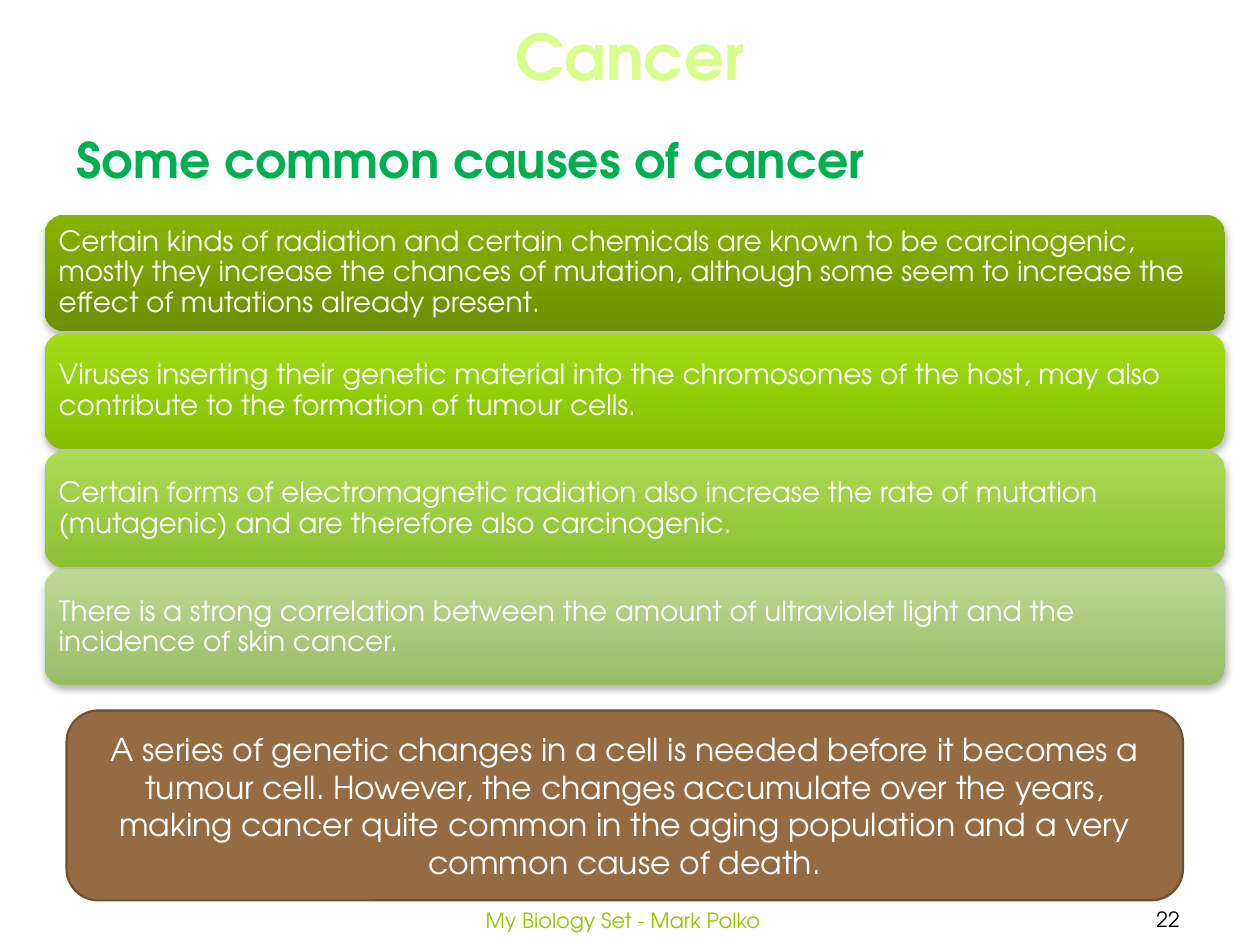
"""Build a slide on the common causes of cancer."""
from lxml import etree
from pptx import Presentation
from pptx.dml.color import RGBColor
from pptx.enum import shapes, text
from pptx.oxml import ns
from pptx.util import Pt

FONT = "TeX Gyre Adventor"
LEFT, MID = text.PP_ALIGN.LEFT, text.PP_ALIGN.CENTER
TOP, CORE = text.MSO_ANCHOR.TOP, text.MSO_ANCHOR.MIDDLE
ROUND = shapes.MSO_SHAPE.ROUNDED_RECTANGLE


def hue(code):
    return RGBColor.from_string(code)


def write(shape, words, size, color, align=MID, anchor=CORE, bold=False, wrap=True):
    frame = shape.text_frame
    frame.text = words
    frame.word_wrap = wrap
    frame.vertical_anchor = anchor
    para = frame.paragraphs[0]
    para.alignment = align
    font = para.runs[0].font
    font.name, font.size, font.bold = FONT, Pt(size), bold
    font.color.rgb = hue(color)
    return frame


deck = Presentation()
deck.slide_width, deck.slide_height = Pt(720), Pt(540)
slide = deck.slides.add_slide(deck.slide_layouts[6])
items = slide.shapes

note = items.add_shape(ROUND, Pt(38), Pt(406), Pt(638), Pt(108.5))
note.shadow.inherit = False
note.fill.solid()
note.fill.fore_color.rgb = hue("956B43")
note.line.color.rgb = hue("6E4F32")
note.line.width = Pt(1.25)
write(note, "A series of genetic changes in a cell is needed before it becomes a "
      "tumour cell. However, the changes accumulate over the years, making cancer "
      "quite common in the aging population and a very common cause of death.",
      18, "FFFFFF")

causes = [
    ("86B400", "6B8F00", "Certain kinds of radiation and certain chemicals are known to be "
     "carcinogenic, mostly they increase the chances of mutation, although some seem to "
     "increase the effect of mutations already present."),
    ("A0DD15", "85BF01", "Viruses inserting their genetic material into the chromosomes of "
     "the host, may also contribute to the formation of tumour cells."),
    ("ABDB55", "8DC032", "Certain forms of electromagnetic radiation also increase the rate "
     "of mutation (mutagenic) and are therefore also carcinogenic."),
    ("BDD995", "99BC67", "There is a strong correlation between the amount of ultraviolet "
     "light and the incidence of skin cancer."),
]
for row, (light, dark, words) in enumerate(causes):
    bar = items.add_shape(ROUND, Pt(25.5), Pt(122.7 + 67.5 * row), Pt(674.5), Pt(66.3))
    bar.line.fill.background()
    bar.fill.gradient()
    bar.fill.gradient_angle = 270
    for stop, code, spot in zip(bar.fill.gradient_stops, (light, dark), (0, 1)):
        stop.color.rgb = hue(code)
        stop.position = spot
    bar.shadow.inherit = False
    glow = bar._element.spPr.find(ns.qn("a:effectLst"))
    shade = etree.SubElement(glow, ns.qn("a:outerShdw"), blurRad=str(Pt(4)),
                             dist=str(Pt(2)), dir="5400000", rotWithShape="0")
    black = etree.SubElement(shade, ns.qn("a:srgbClr"), val="000000")
    etree.SubElement(black, ns.qn("a:alpha"), val="28000")
    frame = write(bar, words, 16, "FFFFFF", LEFT)
    frame.margin_left = frame.margin_right = Pt(4.8)
    frame.margin_top = frame.margin_bottom = Pt(4.8)
    frame.paragraphs[0].line_spacing = 0.9

labels = [
    ((615, 511, 105, 28.7), ("22", 12, "000000")),
    ((218.3, 511.3, 275.6, 28.7), ("My Biology Set - Mark Polko", 12, "94C600")),
    ((36.7, 70.6, 556, 41.2),
     ("Some common causes of cancer", 28, "00B050", LEFT, TOP, True)),
    ((286.5, 6, 147, 51), ("Cancer", 36, "D6FF8C", MID, CORE, True, False)),
]
for place, style in labels:
    write(items.add_textbox(*map(Pt, place)), *style)

deck.save("out.pptx")
